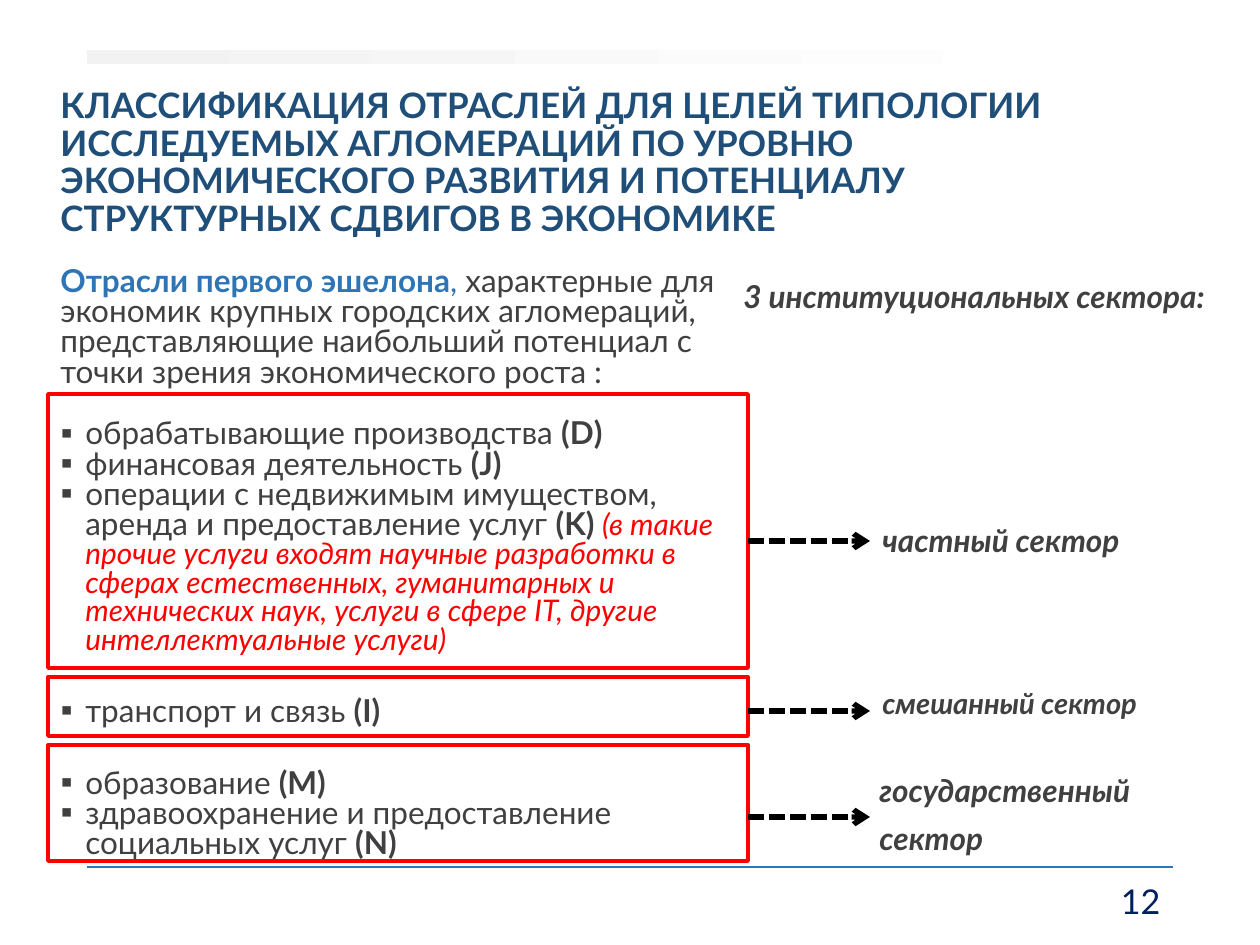
from lxml import etree
from pptx import Presentation
from pptx import util as u
from pptx.dml.color import RGBColor
from pptx.enum import dml, shapes, text
from pptx.oxml.ns import qn

NAVY = RGBColor(0x1F, 0x4E, 0x79)
DEEP = RGBColor(0x00, 0x20, 0x60)
BLUE = RGBColor(0x2E, 0x75, 0xB6)
GREY = RGBColor(0x40, 0x40, 0x40)
PALE = RGBColor(0xF2, 0xF2, 0xF2)
WHITE = RGBColor(0xFF, 0xFF, 0xFF)
RED = RGBColor(0xFF, 0x00, 0x00)
BLACK = RGBColor(0x00, 0x00, 0x00)

LEFT, RIGHT = 48, 748  # sides of the framed column
BULLET_INDENT = 25


def emu(px):
    return u.Emu(round(px * 914400 / 126))


def add_span(para, words, size=18, color=GREY, bold=False, italic=False):
    span = para.add_run()
    span.text = words
    font = span.font
    font.name, font.size = "Lato", u.Pt(size)
    font.bold, font.italic = bold, italic
    font.color.rgb = color


class Page:
    def __init__(self, deck):
        self.slide = deck.slides.add_slide(deck.slide_layouts[6])

    def rect(self, x, y, w, h):
        box = self.slide.shapes.add_shape(
            shapes.MSO_SHAPE.RECTANGLE, emu(x), emu(y), emu(w), emu(h))
        box.shadow.inherit = False
        return box

    def band(self, x, y, w, h):
        box = self.rect(x, y, w, h)
        box.line.fill.background()
        box.fill.gradient()
        box.fill.gradient_angle = 0
        for stop, color, at in zip(box.fill.gradient_stops, (PALE, WHITE), (0, 0.92)):
            stop.color.rgb, stop.position = color, at

    def frame(self, y, h):
        box = self.rect(LEFT, y, RIGHT - LEFT, h)
        box.fill.background()
        box.line.color.rgb, box.line.width = RED, u.Pt(2.25)

    def line(self, x1, x2, y, color, width):
        line = self.slide.shapes.add_connector(
            shapes.MSO_CONNECTOR.STRAIGHT, emu(x1), emu(y), emu(x2), emu(y))
        line.line.color.rgb, line.line.width = color, u.Pt(width)
        etree.SubElement(line._element.spPr, qn("a:effectLst"))
        return line

    def arrow(self, y):
        line = self.line(RIGHT, 870, y, BLACK, 3).line
        line.dash_style = dml.MSO_LINE.SQUARE_DOT
        etree.SubElement(line._get_or_add_ln(), qn("a:tailEnd"), type="arrow")

    def textbox(self, x, y, w, h, top=6, anchor=text.MSO_ANCHOR.TOP):
        frame = self.slide.shapes.add_textbox(emu(x), emu(y), emu(w), emu(h)).text_frame
        frame.word_wrap = True
        frame.margin_top = emu(top)
        frame.vertical_anchor = anchor
        return frame

    def para(self, frame, spans, spacing=1.0, before=0, after=0, bullet=False,
             align=text.PP_ALIGN.LEFT):
        first = frame.paragraphs[0]
        para = frame.add_paragraph() if first.runs else first
        para.alignment, para.line_spacing = align, spacing
        para.space_before, para.space_after = u.Pt(before), u.Pt(after)
        if bullet:
            props = para._p.get_or_add_pPr()
            props.set("marL", str(emu(BULLET_INDENT)))
            props.set("indent", str(-emu(BULLET_INDENT)))
            etree.SubElement(props, qn("a:buFont"), typeface="Lato")
            etree.SubElement(props, qn("a:buChar"), char="▪")
        for words, style in spans:
            add_span(para, words, **style)

    def label(self, x, y, w, lines, size=18, spacing=0.9):
        frame = self.textbox(x, y, w, 68)
        for i, words in enumerate(lines):
            self.para(frame, [(words, dict(size=size, bold=True, italic=True))],
                      spacing, before=8.1 if i else 0)


def main():
    deck = Presentation()
    deck.slide_width, deck.slide_height = emu(1260), emu(945)
    page = Page(deck)

    # Header band, footer rule and page number
    page.band(87, 50, 1086, 14)
    page.line(87, 1173, 867, BLUE, 1.2)
    number = page.textbox(890, 876, 283, 50, anchor=text.MSO_ANCHOR.MIDDLE)
    page.para(number, [("12", dict(size=19.5, color=DEEP))], align=text.PP_ALIGN.RIGHT)

    # Title
    title = page.textbox(LEFT, 82, 1087, 142)
    page.para(title, [(
        "КЛАССИФИКАЦИЯ ОТРАСЛЕЙ ДЛЯ ЦЕЛЕЙ ТИПОЛОГИИ ИССЛЕДУЕМЫХ АГЛОМЕРАЦИЙ "
        "ПО УРОВНЮ ЭКОНОМИЧЕСКОГО РАЗВИТИЯ И ПОТЕНЦИАЛУ СТРУКТУРНЫХ СДВИГОВ "
        "В ЭКОНОМИКЕ", dict(size=20, color=NAVY, bold=True))], 0.9)

    # Introduction and list of industries
    body = page.textbox(LEFT, 224, 703, 651, top=44)
    page.para(body, [
        ("Отрасли первого эшелона", dict(color=BLUE, bold=True)),
        (", ", dict(color=BLUE)),
        ("характерные для экономик крупных городских агломераций, представляющие "
         "наибольший потенциал с точки зрения экономического роста :", {})], 0.8)
    note = ("(в такие прочие услуги входят научные разработки в сферах естественных, "
            "гуманитарных и технических наук, услуги в сфере IT, другие "
            "интеллектуальные услуги)")
    industries = [
        ("обрабатывающие производства ", "(D)", "", 18, 0),
        ("финансовая деятельность ", "(J)", "", 0, 0),
        ("операции с недвижимым имуществом, аренда и предоставление услуг ",
         "(K) ", note, 0, 12),
        ("транспорт и связь ", "(I)", "", 12, 12),
        ("образование ", "(M)", "", 12, 0),
        ("здравоохранение и предоставление социальных услуг ", "(N)", "", 0, 0),
    ]
    for name, code, remark, before, after in industries:
        spans = [(name, {}), (code, dict(bold=True))]
        if remark:
            spans.append((remark, dict(size=17, color=RED, italic=True)))
        page.para(body, spans, 0.8, before, after, bullet=True)

    # Frames with an arrow to each sector
    for top, height, arrow_y in ((394, 274, 541), (677, 59, 711), (745, 116, 817)):
        page.frame(top, height)
        page.arrow(arrow_y)

    # Sector labels
    page.label(731, 275, 557, ["3 институциональных сектора:"])
    page.label(870, 519, 319, ["частный сектор"])
    page.label(870, 689, 314, ["смешанный сектор"], size=16.6, spacing=0.7)
    page.label(867, 769, 427, ["государственный", "сектор"])

    deck.save("out.pptx")


if __name__ == "__main__":
    main()
